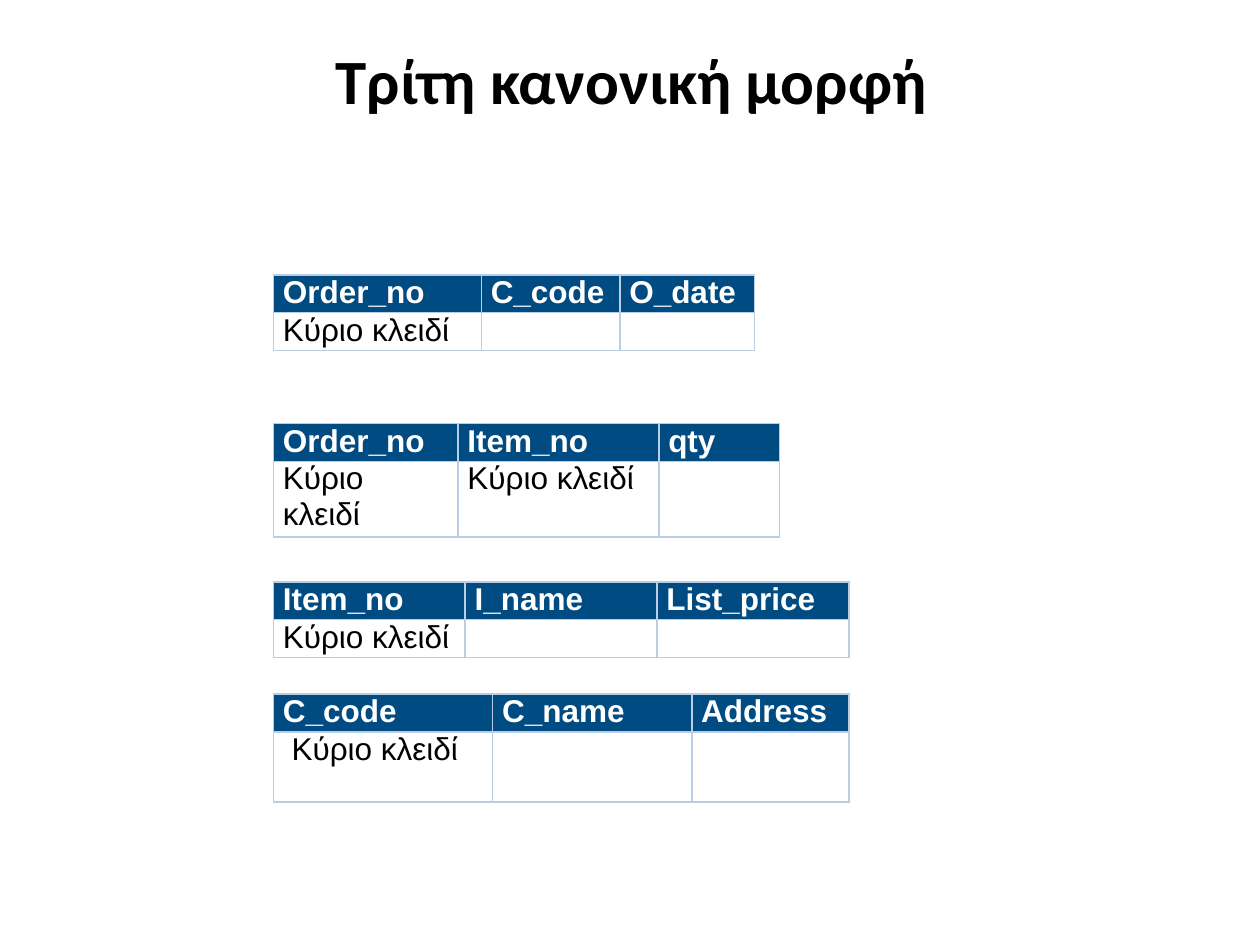
from lxml.etree import SubElement as Sub
from pptx import Presentation
from pptx.dml.color import RGBColor
from pptx.enum.text import MSO_ANCHOR as Anchor, PP_ALIGN as Align
from pptx.oxml.ns import qn
from pptx.util import Pt

KEY = "Κύριο κλειδί"
LEFT, ROW = 156.24, 20
HEAD = {"name": "Arial", "size": Pt(18), "bold": True}
BODY = {**HEAD, "bold": False}
TITLE = {"name": "Calibri", "size": Pt(36), "bold": True}
CELL = {"margin_left": Pt(5.4), "margin_right": Pt(5.4),
        "margin_top": 0, "margin_bottom": 0}
TABLES = [
    (157, [118.8, 79.2, 77], ROW, ["Order_no", "C_code", "O_date"], [KEY, "", ""]),
    (242, [105.5, 114.8, 69], 2 * ROW, ["Order_no", "Item_no", "qty"], [KEY, KEY, ""]),
    (332.5, [109.6] * 3, ROW, ["Item_no", "I_name", "List_price"], [KEY, "", ""]),
    (396.7, [125.3, 113.8, 89.7], 2 * ROW, ["C_code", "C_name", "Address"],
     [" " + KEY, "", ""]),
]


def tint(color):
    """Turn a hex string into a colour."""
    return RGBColor.from_string(color)


def apply(item, form):
    """Set each format value on an item."""
    for name, value in form.items():
        setattr(item, name, value)


def write(para, text, form, color):
    """Put one formatted run in a paragraph."""
    run = para.add_run()
    run.text = text
    apply(run.font, form)
    run.font.color.rgb = tint(color)


def edge(cell, color):
    """Draw a one-point line on all four sides of a cell."""
    props = cell._tc.get_or_add_tcPr()
    for side in ("lnL", "lnR", "lnT", "lnB"):
        line = Sub(props, qn(f"a:{side}"), w=str(Pt(1)))
        fill = Sub(line, qn("a:solidFill"))
        Sub(fill, qn("a:srgbClr"), val=color)


def fill_cell(cell, text, form, ink, back):
    """Format a cell and write its text."""
    apply(cell, CELL)
    edge(cell, "B9CDE5")
    cell.fill.solid()
    cell.fill.fore_color.rgb = tint(back)
    para = cell.text_frame.paragraphs[0]
    if text:
        write(para, text, form, ink)
    else:
        Sub(para._p, qn("a:endParaRPr"), sz="1200")


def add_grid(slide, top, widths, low, heads, keys):
    """Add a table with a header row and a key row."""
    frame = slide.shapes.add_table(2, len(widths), Pt(LEFT), Pt(top),
                                   Pt(sum(widths)), Pt(ROW + low))
    grid = frame.table
    for col, width in zip(grid.columns, widths):
        col.width = Pt(width)
    for row, high in zip(grid.rows, (ROW, low)):
        row.height = Pt(high)
    styles = [(heads, HEAD, "FFFFFF", "004B82"), (keys, BODY, "000000", "FFFFFF")]
    for row, (texts, form, ink, back) in zip(grid.rows, styles):
        for cell, text in zip(row.cells, texts):
            fill_cell(cell, text, form, ink, back)


def add_title(slide, text):
    """Add the centred title."""
    box = slide.shapes.add_textbox(Pt(36.7), Pt(9.4), Pt(648), Pt(71.3))
    frame = box.text_frame
    apply(frame, {"word_wrap": True, "vertical_anchor": Anchor.MIDDLE})
    para = frame.paragraphs[0]
    para.alignment = Align.CENTER
    write(para, text, TITLE, "000000")


def main():
    """Build and save the slide."""
    deck = Presentation()
    apply(deck, {"slide_width": Pt(720), "slide_height": Pt(540)})
    slide = deck.slides.add_slide(deck.slide_layouts[6])
    add_title(slide, "Τρίτη κανονική μορφή")
    for table in TABLES:
        add_grid(slide, *table)
    deck.save("out.pptx")


if __name__ == "__main__":
    main()
